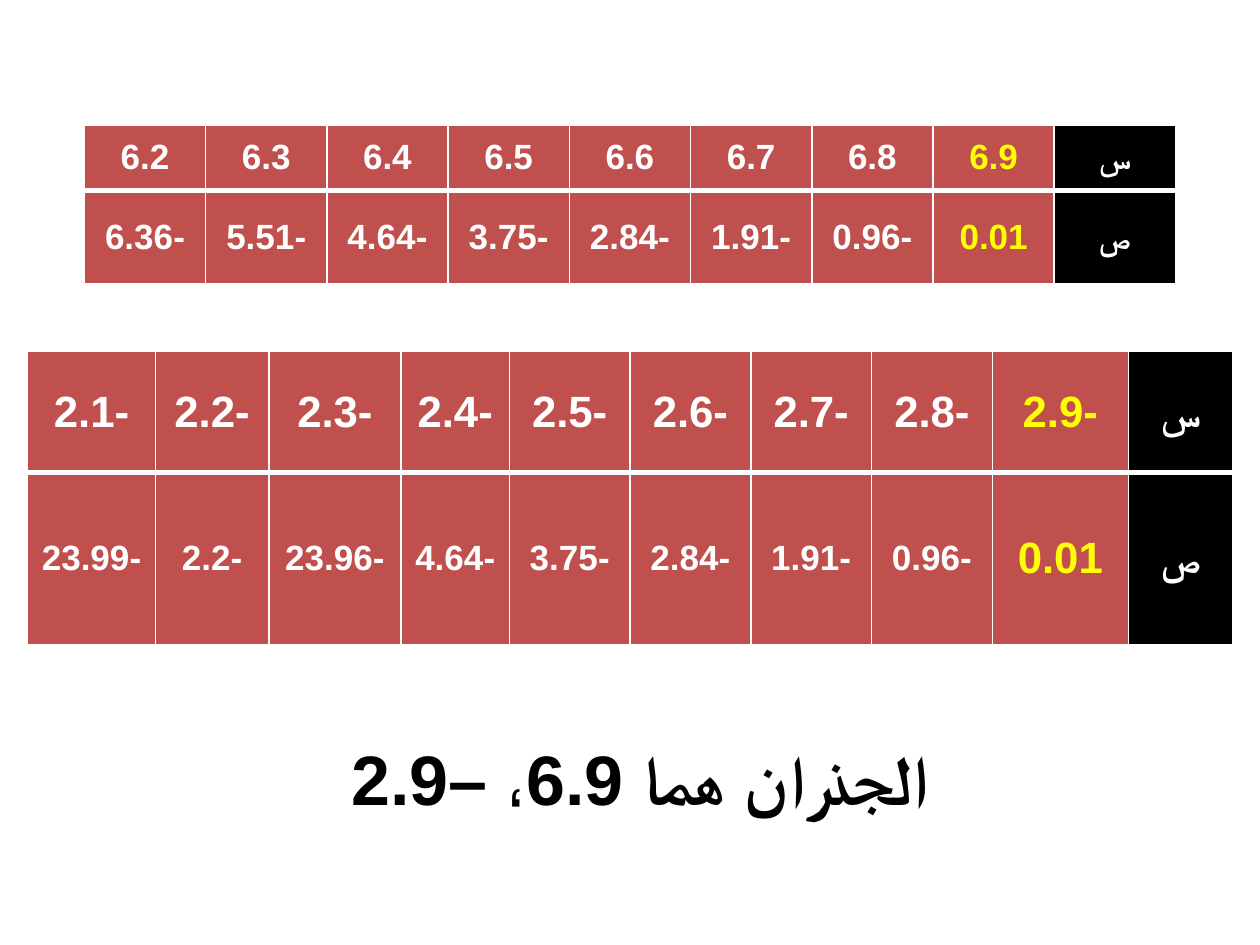
import pptx
import pptx.dml.color
import pptx.enum.text
import pptx.oxml.ns
import pptx.util
from lxml import etree

Pt = pptx.util.Pt
FONT = "Arial"
WHITE, BLACK, RED, YELLOW = "FFFFFF", "000000", "C0504D", "FFFF00"

CONCLUSION = "الجذران هما 6.9، –2.9"
# The last column holds the row names, the one before it the root.
TABLES = [
    {
        "left": 48.2, "top": 71.3, "inset": 3,
        "widths": [69.28] * 9,
        "heights": [37.4, 53.3],
        "sizes": [20, 20], "root_size": 20,
        "rows": [
            ["6.2", "6.3", "6.4", "6.5", "6.6", "6.7", "6.8", "6.9", "س"],
            ["-6.36", "-5.51", "-4.64", "-3.75", "-2.84", "-1.91", "-0.96", "0.01", "ص"],
        ],
    },
    {
        "left": 15.8, "top": 200.9, "inset": 4.3,
        "widths": [73, 64.8, 75.6, 61.9] + [69] * 4 + [77.8, 59.8],
        "heights": [69.1, 98.6],
        "sizes": [25, 20], "root_size": 25,
        "rows": [
            ["-2.1", "-2.2", "-2.3", "-2.4", "-2.5", "-2.6", "-2.7", "-2.8", "-2.9", "س"],
            ["-23.99", "-2.2", "-23.96", "-4.64", "-3.75", "-2.84", "-1.91", "-0.96", "0.01", "ص"],
        ],
    },
]


def color(value):
    return pptx.dml.color.RGBColor.from_string(value)


def write(frame, text, size, ink):
    """Put one bold, centred, right-to-left paragraph in a text frame."""
    frame.text = text
    para = frame.paragraphs[0]
    para.alignment = pptx.enum.text.PP_ALIGN.CENTER
    para._p.get_or_add_pPr().set("rtl", "1")
    span = para.runs[0]
    span.font.name = FONT
    span.font.size = Pt(size)
    span.font.bold = True
    span.font.color.rgb = color(ink)
    complex_font = etree.SubElement(span._r.get_or_add_rPr(), pptx.oxml.ns.qn("a:cs"))
    complex_font.set("typeface", FONT)


def add_borders(cell, top, bottom):
    """Draw white cell borders; the side lines are 1 point wide."""
    properties = cell._tc.get_or_add_tcPr()
    sides = [("a:lnL", 1), ("a:lnR", 1), ("a:lnT", top), ("a:lnB", bottom)]
    for position, (tag, width) in enumerate(sides):
        line = etree.Element(pptx.oxml.ns.qn(tag), w=str(Pt(width)))
        fill = etree.SubElement(line, pptx.oxml.ns.qn("a:solidFill"))
        etree.SubElement(fill, pptx.oxml.ns.qn("a:srgbClr"), val=WHITE)
        properties.insert(position, line)


def add_value_table(page, data):
    rows, widths, heights = data["rows"], data["widths"], data["heights"]
    table = page.shapes.add_table(
        len(rows), len(widths), Pt(data["left"]), Pt(data["top"]),
        Pt(sum(widths)), Pt(sum(heights))).table
    for column, width in zip(table.columns, widths):
        column.width = Pt(width)
    name_column = len(widths) - 1
    root_column = name_column - 1
    for r, values in enumerate(rows):
        table.rows[r].height = Pt(heights[r])
        for c, value in enumerate(values):
            cell = table.cell(r, c)
            cell.vertical_anchor = pptx.enum.text.MSO_ANCHOR.MIDDLE
            cell.margin_left = cell.margin_right = Pt(7.2)
            cell.margin_top = cell.margin_bottom = Pt(data["inset"])
            cell.fill.solid()
            cell.fill.fore_color.rgb = color(BLACK if c == name_column else RED)
            size = data["root_size"] if c >= root_column else data["sizes"][r]
            write(cell.text_frame, value, size, YELLOW if c == root_column else WHITE)
            add_borders(cell, top=3 if r == 1 else 1, bottom=3 if r == 0 else 1)


def main():
    deck = pptx.Presentation()
    deck.slide_width, deck.slide_height = Pt(720), Pt(540)
    page = deck.slides.add_slide(deck.slide_layouts[6])
    box = page.shapes.add_textbox(Pt(133.2), Pt(416.9), Pt(465.1), Pt(55.4))
    box.text_frame.word_wrap = True
    box.text_frame.auto_size = pptx.enum.text.MSO_AUTO_SIZE.SHAPE_TO_FIT_TEXT
    write(box.text_frame, CONCLUSION, 40, BLACK)
    for data in TABLES:
        add_value_table(page, data)
    deck.save("out.pptx")


if __name__ == "__main__":
    main()
